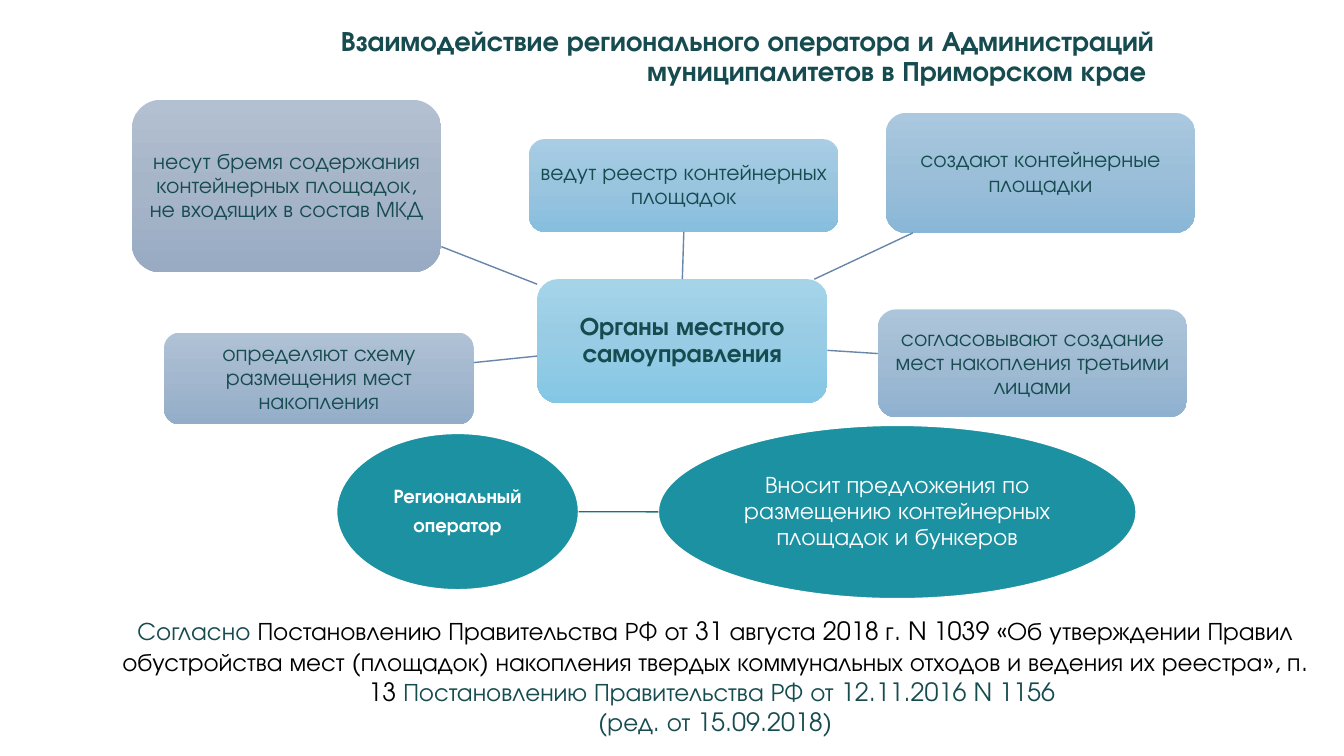
from copy import deepcopy

from pptx import Presentation
from pptx.dml.color import RGBColor
from pptx.enum.shapes import MSO_CONNECTOR, MSO_SHAPE
from pptx.enum.text import MSO_ANCHOR, PP_ALIGN
from pptx.oxml.ns import qn
from pptx.util import Inches, Pt

ROUND, OVAL = MSO_SHAPE.ROUNDED_RECTANGLE, MSO_SHAPE.OVAL
STRAIGHT = MSO_CONNECTOR.STRAIGHT
TOP, MIDDLE, BOTTOM = MSO_ANCHOR.TOP, MSO_ANCHOR.MIDDLE, MSO_ANCHOR.BOTTOM
CENTER, RIGHT = PP_ALIGN.CENTER, PP_ALIGN.RIGHT
SIDE_TOP, SIDE_BOTTOM = 0, 2

THEME = {
    "font": "TeX Gyre Adventor",
    "dark": "164B4F", "black": "000000", "white": "FFFFFF",
    "teal": "1B91A1", "spoke": "6786A9", "link": "167481",
    "title": 20, "hub": 18, "duty": 16, "operator": 14, "proposal": 17, "note": 18,
}

# The slide is a grid of 100 columns by 100 rows
W, H = Inches(13.33), Inches(7.5)
COL, ROW = W / 100, H / 100

TITLE_BOX = (19.13, 1.73, 67.5, 10.53)
DUTIES_BOX = (9.82, 13.2, 79.13, 42.93)
OPERATOR_BOX = (25.05, 56.27, 59.48, 22.93)
NOTE_BOX = (8.03, 80.8, 90.38, 19.2)

HUB = (30.15, 23.73, 21.6, 16.4)
HUB_FILL = ("A5D4E9", "97CCE4", "84C7E5")
DUTY_WIDTH = 23.02
# text, column, row, height, gradient; the first stands straight above the hub
DUTIES = [
    ("ведут реестр контейнерных площадок", 29.55, 5.2, 12.27,
     ("A8CDE4", "9AC5DF", "87BEDE")),
    ("создают контейнерные площадки", 56.1, 1.73, 15.87,
     ("AAC8DF", "9CBFD9", "8AB7D7")),
    ("согласовывают создание мест накопления третьими лицами", 55.5, 27.73, 14.27,
     ("ADC5DA", "A0BBD3", "8FB1D0")),
    ("определяют схему размещения мест накопления", 2.4, 30.8, 12.13,
     ("B0C2D5", "A3B7CE", "93ADC9")),
    ("несут бремя содержания контейнерных площадок, не входящих в состав МКД",
     0, 0, 22.8, ("B3C0D1", "A7B5C9", "98ABC3")),
]


def rgb(name):
    return RGBColor.from_string(THEME.get(name, name))


def place(box, part):
    """Slide position of a part given relative to its region."""
    x, y, w, h = part
    return (int((box[0] + x) * COL), int((box[1] + y) * ROW),
            int(w * COL), int(h * ROW))


def write(sp, paragraphs, size, align=CENTER, anchor=MIDDLE, inset=None,
          spacing=0.9, after=0, bold=False):
    """Fill a shape with paragraphs, each a list of (text, colour) runs."""
    tf = sp.text_frame
    frame = {"word_wrap": True, "vertical_anchor": anchor}
    if inset is not None:
        for side in ("left", "right", "top", "bottom"):
            frame["margin_" + side] = Inches(inset)
    for name, value in frame.items():
        setattr(tf, name, value)
    for i, runs in enumerate(paragraphs):
        p = tf.add_paragraph() if i else tf.paragraphs[0]
        for name, value in {"alignment": align, "line_spacing": spacing,
                            "space_after": Pt(after)}.items():
            setattr(p, name, value)
        for j, (text, color) in enumerate(runs):
            for k, line in enumerate(text.split("\n")):
                if k:
                    p.add_line_break()
                r = p.add_run()
                r.text = line
                for name, value in {"name": THEME["font"], "size": Pt(THEME[size]),
                                    "bold": bold}.items():
                    setattr(r.font, name, value)
                r.font.color.rgb = rgb(color)


def add_card(s, spot, text, stops, size, inset, bold=False):
    sp = s.shapes.add_shape(ROUND, *spot)
    sp.shadow.inherit = False
    sp.line.fill.background()
    sp.fill.gradient()
    sp.fill.gradient_angle = 270
    first = sp._element.spPr.find(".//" + qn("a:gs"))
    first.addnext(deepcopy(first))
    for i, (stop, color) in enumerate(zip(sp.fill.gradient_stops, stops)):
        stop.position = i / 2
        stop.color.rgb = rgb(color)
    write(sp, [[(text, "dark")]], size, inset=inset, bold=bold)
    return sp


def add_oval(s, spot, lines, size, bold=False):
    sp = s.shapes.add_shape(OVAL, *spot)
    sp.shadow.inherit = False
    sp.fill.solid()
    sp.fill.fore_color.rgb = rgb("teal")
    sp.line.color.rgb = rgb("white")
    sp.line.width = Pt(1)
    write(sp, [[(line, "white")] for line in lines], size, inset=0.01,
          after=5, bold=bold)
    return sp


def center(sp):
    return sp.left + sp.width / 2, sp.top + sp.height / 2


def edge_toward(sp, other):
    """Where the line between two centres leaves the bounds of sp."""
    (x, y), (ox, oy) = center(sp), center(other)
    dx, dy = ox - x, oy - y
    share = min(size / 2 / abs(d) for size, d in ((sp.width, dx), (sp.height, dy)) if d)
    return int(x + dx * share), int(y + dy * share)


def add_link(s, a, b, color):
    c = s.shapes.add_connector(STRAIGHT, *edge_toward(a, b), *edge_toward(b, a))
    c.line.color.rgb = rgb(color)
    c.line.width = Pt(1)
    sp_pr = c._element.spPr
    sp_pr.append(sp_pr.makeelement(qn("a:effectLst"), {}))
    return c


def add_title(s, box):
    tb = s.shapes.add_textbox(*place(box, (0, 0, *box[2:])))
    text = ("Взаимодействие регионального оператора и Администраций "
            "муниципалитетов в Приморском крае ")
    write(tb, [[(text, "dark")]], "title", RIGHT, BOTTOM, bold=True)


def add_duties(s, box):
    hub = add_card(s, place(box, HUB), "Органы местного самоуправления",
                   HUB_FILL, "hub", 0.05, bold=True)
    for i, (text, x, y, h, stops) in enumerate(DUTIES):
        card = add_card(s, place(box, (x, y, DUTY_WIDTH, h)), text, stops, "duty", 0.04)
        spoke = add_link(s, hub, card, "spoke")
        if i == 0:
            spoke.begin_connect(hub, SIDE_TOP)
            spoke.end_connect(card, SIDE_BOTTOM)


def add_operator(s, box):
    operator = add_oval(s, place(box, (0, 1.07, 18, 20.67)),
                        ["Региональный", "оператор"], "operator", bold=True)
    proposal = add_oval(
        s, place(box, (23.93, 0, 35.55, box[3])),
        ["Вносит предложения по размещению контейнерных площадок и бункеров"],
        "proposal")
    add_link(s, operator, proposal, "link")


def add_note(s, box):
    tb = s.shapes.add_textbox(*place(box, (0, 0, *box[2:])))
    runs = [
        ("Согласно ", "dark"),
        ("Постановлению Правительства РФ от 31 августа 2018 г. N 1039 "
         "«Об утверждении Правил обустройства мест (площадок) накопления твердых "
         "коммунальных отходов и ведения их реестра», п. 13 ", "black"),
        ("Постановлению Правительства РФ от 12.11.2016 N 1156 \n"
         "(ред. от 15.09.2018)", "dark"),
    ]
    write(tb, [runs], "note", anchor=TOP, spacing=1.0)


def main():
    prs = Presentation()
    prs.slide_width, prs.slide_height = W, H
    s = prs.slides.add_slide(prs.slide_layouts[6])
    add_title(s, TITLE_BOX)
    add_duties(s, DUTIES_BOX)
    add_operator(s, OPERATOR_BOX)
    add_note(s, NOTE_BOX)
    prs.save("out.pptx")


if __name__ == "__main__":
    main()
